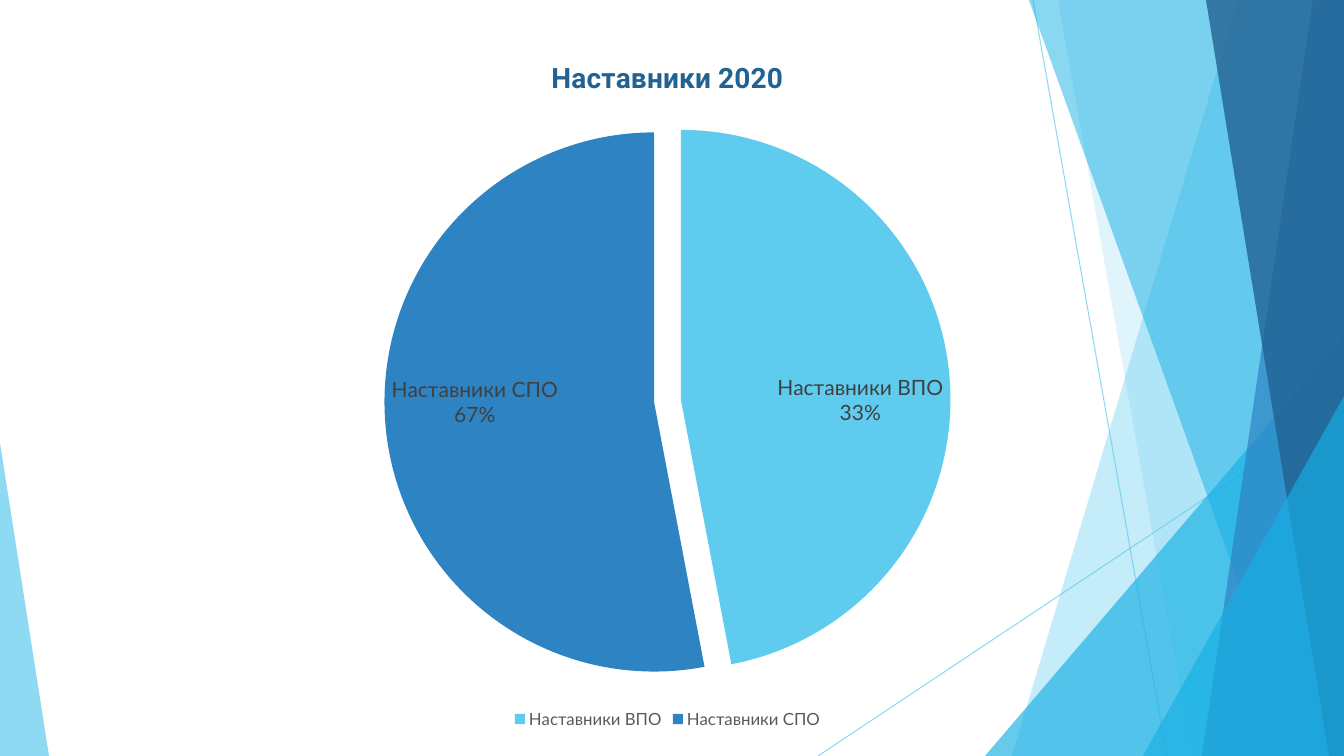
import pptx
import pptx.util
import pptx.chart.data
import pptx.dml.color
import pptx.enum.chart
import pptx.enum.shapes
import pptx.oxml
import pptx.oxml.ns

W, H = 1344, 756
PX = 12192000 / W
SKY, CYAN, BLUE, NAVY = "5FCBEF", "17B0E4", "2E83C3", "226292"


def px(n):
    return pptx.util.Emu(round(n * PX))


def rgb(value):
    return pptx.dml.color.RGBColor.from_string(value)


def set_font(font, name, size, color, bold=False):
    font.name, font.size, font.bold = name, pptx.util.Pt(size), bold
    font.color.rgb = rgb(color)


def set_alpha(fill, percent):
    color = fill._xPr.find(".//" + pptx.oxml.ns.qn("a:srgbClr"))
    alpha = pptx.oxml.parse_xml(
        f'<a:alpha {pptx.oxml.ns.nsdecls("a")} val="{percent * 1000}"/>')
    color.append(alpha)


def paint(sp, color, percent):
    sp.shadow.inherit = False
    sp.fill.solid()
    sp.fill.fore_color.rgb = rgb(color)
    set_alpha(sp.fill, percent)
    sp.line.fill.background()


def add_line(slide, x1, y1, x2, y2):
    line = slide.shapes.add_connector(
        pptx.enum.shapes.MSO_CONNECTOR.STRAIGHT, px(x1), px(y1), px(x2), px(y2))
    line.line.width = pptx.util.Pt(0.75)
    line.line.color.rgb = rgb(SKY)
    set_alpha(line.line.fill, 70)
    line._element.spPr.append(
        pptx.oxml.parse_xml(f'<a:effectLst {pptx.oxml.ns.nsdecls("a")}/>'))


def add_band(slide, top, bottom, color, percent):
    """Full-height facet from a slanted left edge to the right of the slide."""
    fb = slide.shapes.build_freeform(px(top), 0, scale=1.0)
    fb.add_line_segments([(px(W), 0), (px(W), px(H)), (px(bottom), px(H))], close=True)
    paint(fb.convert_to_shape(), color, percent)


def add_triangle(slide, x, y, w, apex, color, percent):
    """Triangle standing on the bottom edge of the slide."""
    sp = slide.shapes.add_shape(
        pptx.enum.shapes.MSO_SHAPE.ISOSCELES_TRIANGLE, px(x), px(y), px(w), px(H - y))
    sp.adjustments[0] = apex
    paint(sp, color, percent)


def add_facets(slide):
    add_line(slide, 1033, 0, 1167, H)
    add_line(slide, W, 406, 818, H)
    add_band(slide, 1238, 1012, SKY, 36)
    add_band(slide, 1058, 1192, SKY, 20)
    add_triangle(slide, 985, 336, 359, 1, CYAN, 66)
    add_band(slide, 1029, 1301, CYAN, 50)
    add_band(slide, 1313, 1202, BLUE, 70)
    add_band(slide, 1206, 1329, NAVY, 80)
    add_triangle(slide, 1143, 396, 201, 1, CYAN, 66)
    add_triangle(slide, 0, 443, 49, 0, SKY, 70)


def add_mentors_chart(slide, x, y, w, h):
    # Name, value, label share, colour
    mentors = [("Наставники ВПО", 47, "33%", SKY), ("Наставники СПО", 53, "67%", BLUE)]
    data = pptx.chart.data.CategoryChartData()
    data.categories = [m[0] for m in mentors]
    data.add_series("Наставники", [m[1] for m in mentors])
    chart = slide.shapes.add_chart(
        pptx.enum.chart.XL_CHART_TYPE.PIE_EXPLODED, px(x), px(y), px(w), px(h), data).chart
    set_font(chart.font, "Lato", 10, "000000")

    # Title and legend
    chart.has_title = True
    p = chart.chart_title.text_frame.paragraphs[0]
    p.text = "Наставники 2020"
    set_font(p.runs[0].font, "Roboto", 20, NAVY, True)
    chart.has_legend = True
    chart.legend.position = pptx.enum.chart.XL_LEGEND_POSITION.BOTTOM
    chart.legend.include_in_layout = False
    set_font(chart.legend.font, "Lato", 12, "595959")

    # Slices and their labels
    plot = chart.plots[0]
    plot.vary_by_categories = True
    series = plot.series[0]
    explosion = series._element.find(pptx.oxml.ns.qn("c:explosion"))
    explosion.set("val", "5")
    inside_end = pptx.enum.chart.XL_LABEL_POSITION.INSIDE_END
    for i, (name, _, share, color) in enumerate(mentors):
        point = series.points[i]
        point.format.fill.solid()
        point.format.fill.fore_color.rgb = rgb(color)
        point.format.line.fill.background()
        # A point needs its own explosion to stay apart
        point_xml = series._element.findall(pptx.oxml.ns.qn("c:dPt"))[i]
        point_explosion = pptx.oxml.parse_xml(
            f'<c:explosion {pptx.oxml.ns.nsdecls("c")} val="5"/>')
        point_xml.find(pptx.oxml.ns.qn("c:spPr")).addprevious(point_explosion)
        label = point.data_label
        tf = label.text_frame
        tf.text = f"{name}\n{share}"
        for p in tf.paragraphs:
            set_font(p.runs[0].font, "Lato", 15, "404040")
        label.position = inside_end
    labels = series.data_labels
    labels.show_value = False
    labels.show_category_name = labels.show_percentage = True
    labels.position = inside_end
    set_font(labels.font, "Lato", 15, "404040")


def main():
    prs = pptx.Presentation()
    prs.slide_width, prs.slide_height = px(W), px(H)
    slide = prs.slides.add_slide(prs.slide_layouts[6])
    add_facets(slide)
    add_mentors_chart(slide, 60, 34, 1215, 699)
    prs.save("out.pptx")


if __name__ == "__main__":
    main()
